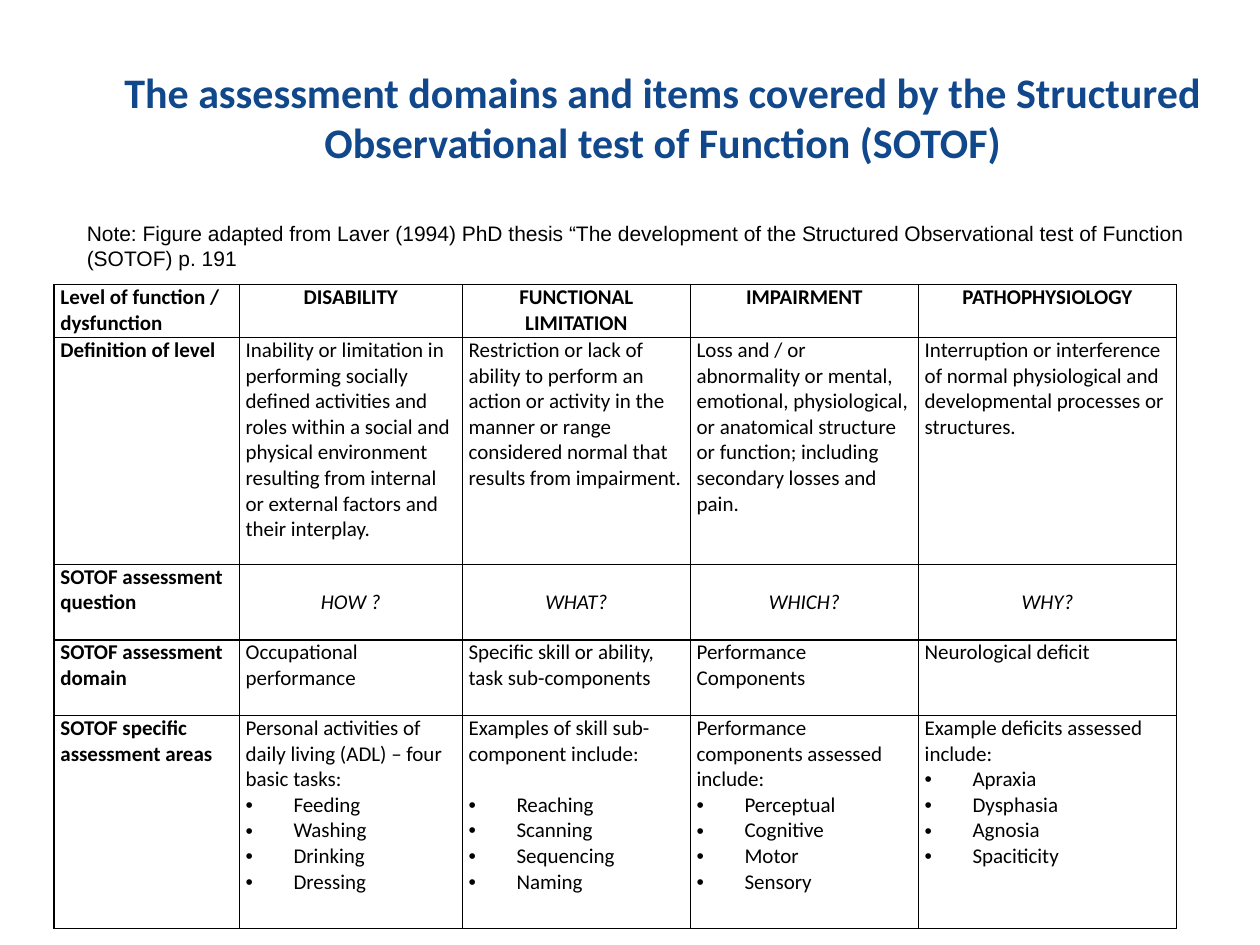
from lxml import etree
from pptx import Presentation
from pptx.dml.color import RGBColor
from pptx.enum.text import MSO_ANCHOR, PP_ALIGN
from pptx.oxml.ns import qn
from pptx.util import Inches, Pt

CENTER, LEFT = PP_ALIGN.CENTER, PP_ALIGN.LEFT
TOP, MIDDLE = MSO_ANCHOR.TOP, MSO_ANCHOR.MIDDLE
BLACK = RGBColor(0x00, 0x00, 0x00)
BLUE = RGBColor(0x11, 0x47, 0x8B)

TITLE = "The assessment domains and items covered by the Structured Observational test of Function (SOTOF)"
NOTE = ("Note: Figure adapted from Laver (1994) PhD thesis “The development of the "
        "Structured Observational test of Function (SOTOF) p. 191")
ROWS = [
    ["Level of function / dysfunction", "DISABILITY", "FUNCTIONAL LIMITATION", "IMPAIRMENT", "PATHOPHYSIOLOGY"],
    ["Definition of level",
     "Inability or limitation in performing socially defined activities and roles within a social and "
     "physical environment resulting from internal or external factors and their interplay.",
     "Restriction or lack of ability to perform an action or activity in the manner or range considered "
     "normal that results from impairment.",
     "Loss and / or abnormality or mental, emotional, physiological, or anatomical structure or function; "
     "including secondary losses and pain.",
     "Interruption or interference of normal physiological and developmental processes or structures."],
    ["SOTOF assessment question", "HOW ?", "WHAT?", "WHICH?", "WHY?"],
    ["SOTOF assessment domain", "Occupational performance", "Specific skill or ability, task sub-components",
     "Performance Components", "Neurological deficit"],
    ["SOTOF specific assessment areas",
     "Personal activities of daily living (ADL) – four basic tasks:",
     "Examples of skill sub-component include:",
     "Performance components assessed include:",
     "Example deficits assessed include:"],
]
AREAS = [
    [],
    ["Feeding", "Washing", "Drinking", "Dressing"],
    ["Reaching", "Scanning", "Sequencing", "Naming"],
    ["Perceptual", "Cognitive", "Motor", "Sensory"],
    ["Apraxia", "Dysphasia", "Agnosia", "Spaciticity"],
]
HEADER_ROW, QUESTION_ROW, AREAS_ROW = 0, 2, 4
SKILL_COLUMN = 2
COLUMN_WIDTHS = [1.47, 1.77, 1.81, 1.81, 2.05]
ROW_HEIGHTS = [0.42, 1.8, 0.6, 0.6, 1.69]


def write(paragraph, text, alignment=LEFT, color=BLACK, **formats):
    paragraph.alignment = alignment
    run = paragraph.add_run()
    run.text = text
    for name, value in ({"name": "Calibri", "size": Pt(12)} | formats).items():
        setattr(run.font, name, value)
    run.font.color.rgb = color


def add_text_box(slide, box, anchor, text, **formats):
    frame = slide.shapes.add_textbox(*map(Inches, box)).text_frame
    frame.word_wrap = True
    frame.vertical_anchor = anchor
    write(frame.paragraphs[0], text, **formats)


def add_bullet(paragraph):
    properties = paragraph._p.get_or_add_pPr()
    properties.set("marL", str(Inches(0.38)))
    properties.set("indent", str(-Inches(0.38)))
    etree.SubElement(properties, qn("a:buFont"), typeface="Arial")
    etree.SubElement(properties, qn("a:buChar"), char="•")
    tabs = etree.SubElement(properties, qn("a:tabLst"))
    etree.SubElement(tabs, qn("a:tab"), pos=str(Inches(0.5)), algn="l")


def format_cell(cell, anchor):
    properties = cell._tc.get_or_add_tcPr()
    for side in ("lnL", "lnR", "lnT", "lnB"):
        line = etree.SubElement(properties, qn(f"a:{side}"), w=str(Pt(1)))
        fill = etree.SubElement(line, qn("a:solidFill"))
        etree.SubElement(fill, qn("a:srgbClr"), val=str(BLACK))
    cell.fill.background()
    cell.margin_left = cell.margin_right = Inches(0.05)
    cell.margin_top = cell.margin_bottom = 0
    cell.vertical_anchor = anchor


def add_domain_table(slide):
    table = slide.shapes.add_table(
        len(ROWS), len(COLUMN_WIDTHS), Inches(0.43), Inches(2.26),
        Inches(sum(COLUMN_WIDTHS)), Inches(sum(ROW_HEIGHTS))).table
    table.first_row = table.horz_banding = False
    for column, width in zip(table.columns, COLUMN_WIDTHS):
        column.width = Inches(width)
    for row, height in zip(table.rows, ROW_HEIGHTS):
        row.height = Inches(height)

    for row, texts in enumerate(ROWS):
        for column, text in enumerate(texts):
            cell = table.cell(row, column)
            is_label = column == 0
            is_question = row == QUESTION_ROW and not is_label
            is_centered = is_question or (row == HEADER_ROW and not is_label)
            format_cell(cell, MIDDLE if is_question else TOP)
            write(cell.text_frame.paragraphs[0], text, CENTER if is_centered else LEFT,
                  bold=is_label or row == HEADER_ROW, italic=is_question)

    for column, areas in enumerate(AREAS):
        for index, area in enumerate(areas):
            paragraph = table.cell(AREAS_ROW, column).text_frame.add_paragraph()
            add_bullet(paragraph)
            if column == SKILL_COLUMN and index == 0:
                paragraph.space_before = Pt(14.6)
            write(paragraph, area)


def main():
    presentation = Presentation()
    presentation.slide_width, presentation.slide_height = Inches(10), Inches(7.5)
    slide = presentation.slides.add_slide(presentation.slide_layouts[6])
    add_domain_table(slide)
    add_text_box(slide, (0.75, 0.3, 9.02, 1.25), MIDDLE, TITLE,
                 alignment=CENTER, color=BLUE, size=Pt(24), bold=True)
    add_text_box(slide, (0.59, 1.7, 9.21, 0.81), TOP, NOTE, name="Arial")
    presentation.save("out.pptx")


if __name__ == "__main__":
    main()
